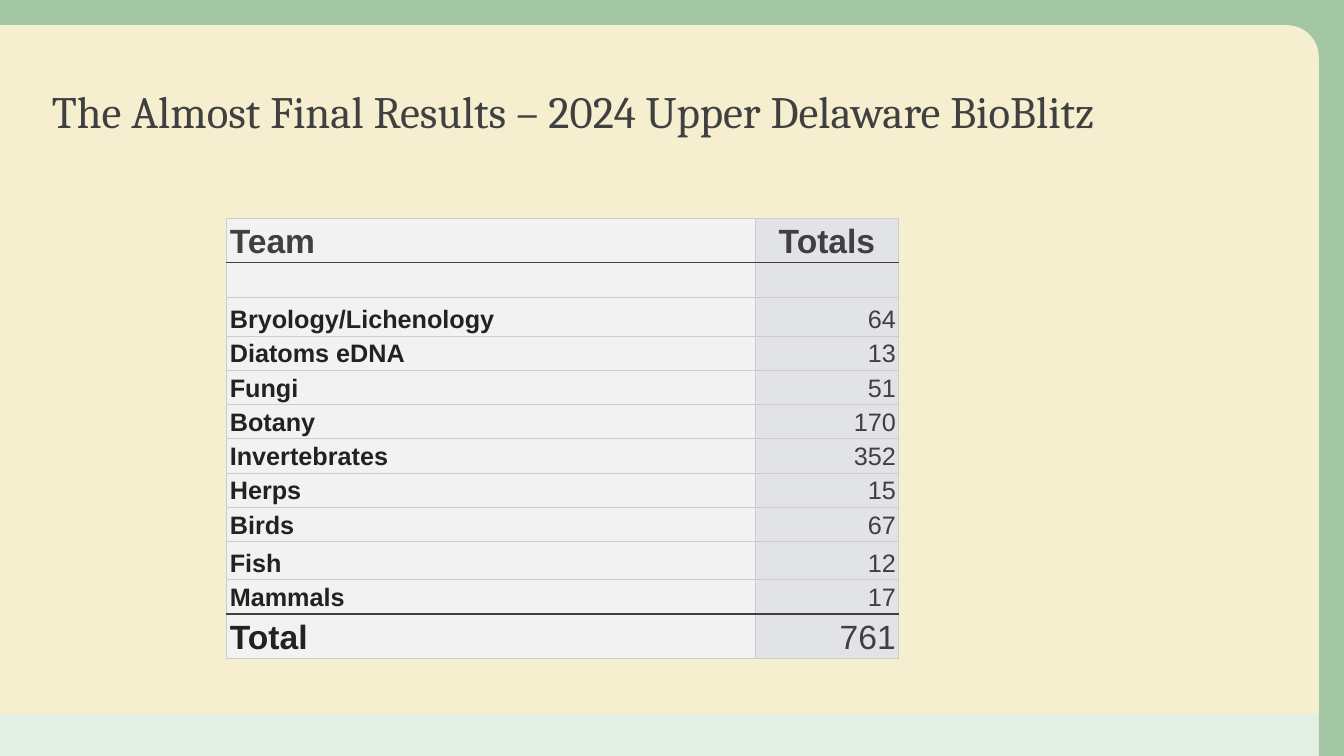
from lxml import etree
from pptx import Presentation
from pptx.dml.color import RGBColor
from pptx.enum.shapes import MSO_SHAPE
from pptx.enum.text import MSO_ANCHOR, PP_ALIGN
from pptx.oxml.ns import qn
from pptx.util import Inches, Pt

RECT, ONE_ROUND = MSO_SHAPE.RECTANGLE, MSO_SHAPE.ROUND_1_RECTANGLE
BOTTOM = MSO_ANCHOR.BOTTOM
LEFT, CENTER, RIGHT = PP_ALIGN.LEFT, PP_ALIGN.CENTER, PP_ALIGN.RIGHT

COLORS = {
    "green": "488E4A", "mint": "D8EBD8", "cream": "F5EECF",
    "text": "404040", "label": "222222", "grid": "CCCCCC",
    "team": "F2F2F2", "totals": "E2E3E7",
}
COLUMNS, ROWS = 160, 90  # page grid
HEADER = ("Team", "Totals")
COUNTS = [
    ("Bryology/Lichenology", 64), ("Diatoms eDNA", 13), ("Fungi", 51),
    ("Botany", 170), ("Invertebrates", 352), ("Herps", 15),
    ("Birds", 67), ("Fish", 12), ("Mammals", 17),
]


class Page:
    """Holds the style and the current slide; lengths are grid units."""

    def __init__(self, deck):
        self.slide = deck.slides.add_slide(deck.slide_layouts[6])
        self.column = deck.slide_width / COLUMNS
        self.row = deck.slide_height / ROWS

    def place(self, left, top, width, height):
        return (round(left * self.column), round(top * self.row),
                round(width * self.column), round(height * self.row))

    def color(self, name):
        return RGBColor.from_string(COLORS[name])

    def panel(self, area, fill, opacity=100, kind=RECT, corner=None):
        shape = self.slide.shapes.add_shape(kind, *self.place(*area))
        shape.shadow.inherit = False
        shape.line.fill.background()
        shape.fill.solid()
        shape.fill.fore_color.rgb = self.color(fill)
        if corner is not None:
            shape.adjustments[0] = corner
        if opacity < 100:
            tint = shape._element.spPr.find(".//" + qn("a:srgbClr"))
            etree.SubElement(tint, qn("a:alpha"), val=str(opacity * 1000))

    def set_text(self, frame, text, size, font, color, bold=False, align=LEFT):
        frame.text = text
        para = frame.paragraphs[0]
        para.alignment = align
        for span in para.runs:
            span.font.size, span.font.name, span.font.bold = Pt(size), font, bold
            span.font.color.rgb = self.color(color)
        return para

    def title(self, area, text):
        box = self.slide.shapes.add_textbox(*self.place(*area))
        box.text_frame.word_wrap = True
        box.text_frame.vertical_anchor = BOTTOM
        para = self.set_text(box.text_frame, text, 32, "Cambria", "text")
        para.line_spacing = 0.9

    def border(self, cell, side, color, width):
        line = etree.SubElement(cell._tc.get_or_add_tcPr(), qn("a:ln" + side),
                                w=str(int(Pt(width))))
        fill = etree.SubElement(line, qn("a:solidFill"))
        etree.SubElement(fill, qn("a:srgbClr"), val=COLORS[color])

    def cell(self, cell, fill, ruled_sides):
        cell.margin_left = cell.margin_right = Inches(0.03)
        cell.margin_top = cell.margin_bottom = Inches(0.02)
        cell.vertical_anchor = BOTTOM
        for side in "LRTB":
            style = ("text", 1) if side in ruled_sides else ("grid", 0.6)
            self.border(cell, side, *style)
        cell.fill.solid()
        cell.fill.fore_color.rgb = self.color(fill)

    def table(self, area, records, widths, heights):
        frame = self.slide.shapes.add_table(len(records), len(widths),
                                            *self.place(*area))
        table = frame.table
        table.first_row = table.horz_banding = False
        for column, width in zip(table.columns, widths):
            column.width = round(width * self.column)
        last = len(records) - 1
        # Strong rules lie below the header and above the total
        rules = {0: "B", 1: "T", last - 1: "B", last: "T"}
        for index, (record, height) in enumerate(zip(records, heights)):
            table.rows[index].height = round(height * self.row)
            size = 24 if index in (0, last) else 18
            for place, value in enumerate(record):
                cell = table.cell(index, place)
                self.cell(cell, ("team", "totals")[place], rules.get(index, ""))
                if value == "":
                    continue
                header = index == 0
                number_align = CENTER if header else RIGHT
                self.set_text(cell.text_frame, str(value), size, "Arial",
                              "text" if header or place else "label",
                              header or place == 0,
                              number_align if place else LEFT)


def main():
    deck = Presentation()
    deck.slide_width, deck.slide_height = Inches(13.33), Inches(7.5)
    page = Page(deck)

    # Background bands and rounded panel
    page.panel((0, 85, 157, 5), "mint", 70)
    page.panel((157, 85, 3, 5), "green", 50)
    page.panel((0, 0, 160, 85), "green", 50)
    page.panel((0, 3, 157, 82), "cream", kind=ONE_ROUND, corner=0.046)

    # Title
    page.title((5, 7.5, 148, 9.6),
               "The Almost Final Results – 2024 Upper Delaware BioBlitz")

    # Results table
    total = sum(count for _, count in COUNTS)
    records = [HEADER, ("", ""), *COUNTS, ("Total", total)]
    tall = {"Team": 4.9, "Total": 4.9, "Bryology/Lichenology": 4.65, "Fish": 4.55}
    heights = [tall.get(team, 3.9) for team, _ in records]
    page.table((27, 26, 80, sum(heights)), records, (62.9, 17.1), heights)

    deck.save("out.pptx")


if __name__ == "__main__":
    main()
